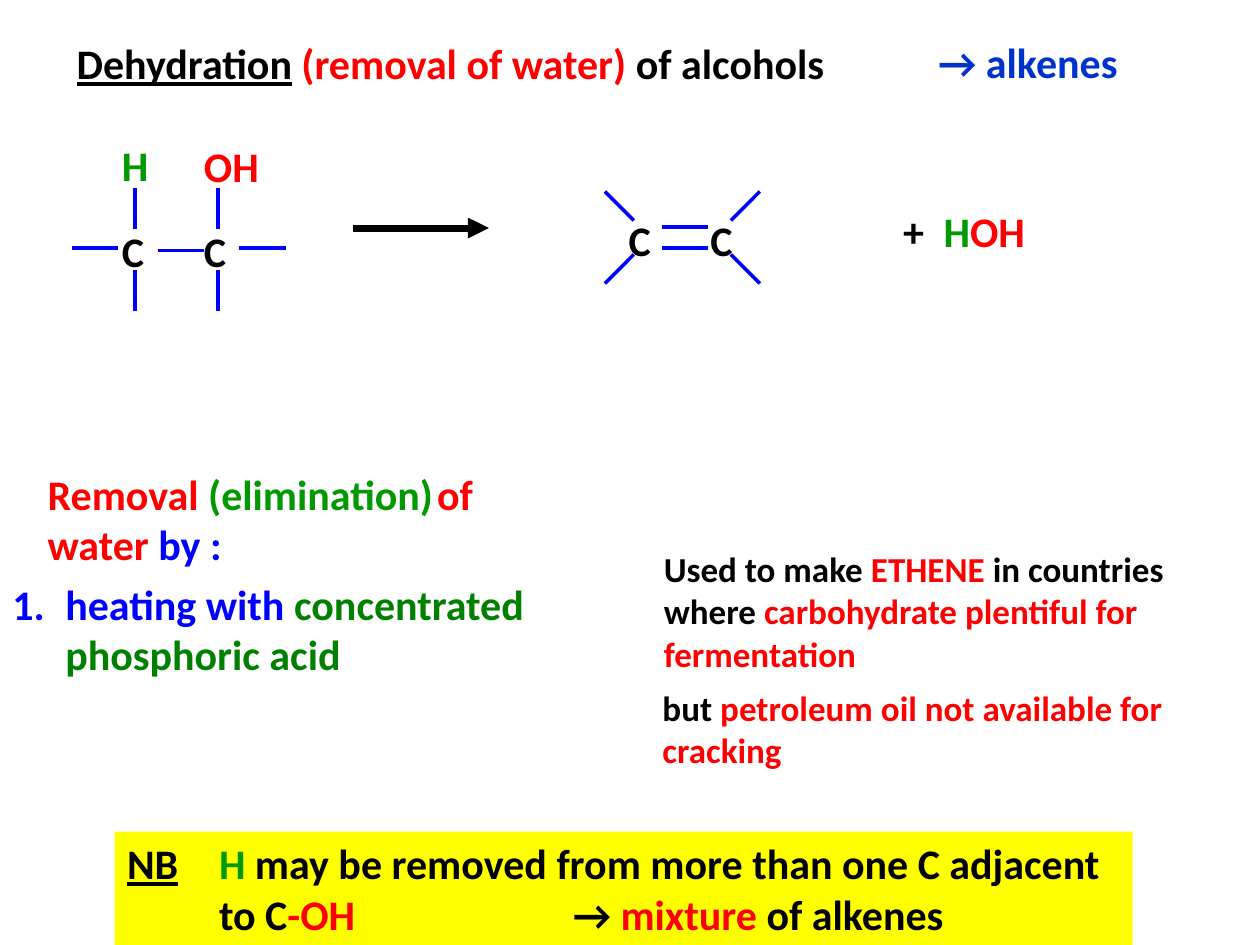
from pptx import Presentation
from pptx.dml.color import RGBColor
from pptx.enum.shapes import MSO_CONNECTOR as Conn, MSO_SHAPE as Kind
from pptx.enum.text import MSO_ANCHOR as Anchor, MSO_AUTO_SIZE as Fit, PP_ALIGN as Align
from pptx.oxml.ns import qn
from pptx.util import Inches, Pt
from lxml.etree import SubElement

BLACK = RGBColor(0, 0, 0)
RED = RGBColor(255, 0, 0)
BLUE = RGBColor(0, 0, 255)
NAVY = RGBColor(0, 0x33, 0xCC)
GREEN = RGBColor(0, 0x99, 0)
DARK = RGBColor(0, 0x80, 0)
YELLOW = RGBColor(255, 255, 0)
FACE = "Calibri"
BOND = 0.37
STEM = 0.33
SLANT = 0.23


def fill_text(shape, runs, size=24, wrap=True, hang=0):
    frame = shape.text_frame
    frame.word_wrap = wrap
    frame.auto_size = Fit.SHAPE_TO_FIT_TEXT
    frame.vertical_anchor = Anchor.TOP
    para = frame.paragraphs[0]
    para.alignment = Align.LEFT
    para.font.name = FACE
    para.font.size = Pt(size)
    para.font.bold = True
    if hang:
        props = para._p.get_or_add_pPr()
        props.set("marL", str(Inches(hang)))
        props.set("indent", str(-Inches(hang)))
    for text, color in runs:
        run = para.add_run()
        run.text = text
        run.font.color.rgb = color
    return para


def add_text(shapes, box, runs, **style):
    label = shapes.add_textbox(*map(Inches, box))
    return fill_text(label, runs, **style)


def add_line(shapes, start, end, color=BLUE, width=2, arrow=False):
    line = shapes.add_connector(Conn.STRAIGHT, *map(Inches, start + end))
    line.line.color.rgb = color
    line.line.width = Pt(width)
    if arrow:
        SubElement(line.line._get_or_add_ln(), qn("a:tailEnd"), type="triangle")
    SubElement(line._element.spPr, qn("a:effectLst"))


def add_atom(shapes, left, top, name, color=BLACK):
    add_text(shapes, (left, top, 0.64, 0.5), [(name, color)], wrap=False)


def draw_alcohol(slide):
    shapes = slide.shapes.add_group_shape().shapes
    for left, y in ((0.57, 1.97), (1.25, 1.99), (1.9, 1.97)):
        add_line(shapes, (left, y), (left + BOND, y))
    for x in (1.07, 1.73):
        for top in (1.49, 2.14):
            add_line(shapes, (x, top + STEM), (x, top))
    for left in (0.87, 1.52):
        add_atom(shapes, left, 1.74, "C")
    add_atom(shapes, 0.87, 1.06, "H", GREEN)
    add_atom(shapes, 1.52, 1.07, "OH", RED)


def draw_alkene(slide):
    shapes = slide.shapes.add_group_shape().shapes
    for y in (1.8, 1.97):
        add_line(shapes, (5.25, y), (5.25 + BOND, y))
    for near, far in ((5.03, 5.03 - SLANT), (5.8, 5.8 + SLANT)):
        add_line(shapes, (near, 1.75), (far, 1.75 - SLANT))
        add_line(shapes, (near, 2.02), (far, 2.02 + SLANT))
    for left in (4.89, 5.54):
        add_atom(shapes, left, 1.65, "C")


def draw_title(slide):
    para = add_text(slide.shapes, (0.51, 0.25, 7.16, 0.5), [
        ("Dehydration", BLACK), (" (removal of water) ", RED), ("of alcohols", BLACK)])
    para.runs[0].font.underline = True
    add_text(slide.shapes, (7.35, 0.24, 1.94, 0.5), [("→ alkenes", NAVY)], wrap=False)


def draw_notes(slide):
    shapes = slide.shapes
    para = add_text(shapes, (0.28, 3.67, 3.83, 0.9), [
        ("Removal ", RED), ("(elimination)", GREEN), (" ", BLACK),
        ("of water", RED), (" by :", BLUE)])
    para.runs[2].font.size = Pt(10)
    add_text(shapes, (0, 4.54, 4.83, 0.91), [
        ("1.\theating with ", BLUE), ("concentrated phosphoric acid", DARK)], hang=0.42)
    add_text(shapes, (5.17, 4.3, 4.83, 1.1), [
        ("Used to make ", BLACK), ("ETHENE", RED), (" in countries where ", BLACK),
        ("carbohydrate plentiful for fermentation", RED)], size=20)
    add_text(shapes, (5.16, 5.4, 4.17, 0.77), [
        ("but ", BLACK), ("petroleum oil not available for cracking", RED)], size=20)


def draw_banner(slide):
    box = slide.shapes.add_shape(Kind.RECTANGLE, *map(Inches, (0.91, 6.6, 8.08, 0.9)))
    box.shadow.inherit = False
    box.fill.solid()
    box.fill.fore_color.rgb = YELLOW
    box.line.fill.background()
    para = fill_text(box, [
        ("NB", BLACK), ("\t", BLACK), ("H", GREEN),
        (" may be removed from more than one C adjacent to C", BLACK),
        ("-OH", RED)], hang=0.73)
    para.runs[0].font.underline = True
    add_text(slide.shapes, (4.45, 7, 4.17, 0.5), [
        ("→", BLACK), (" mixture", RED), (" of alkenes", BLACK)])


def main():
    deck = Presentation()
    deck.slide_width = Inches(10)
    deck.slide_height = Inches(7.5)
    slide = deck.slides.add_slide(deck.slide_layouts[6])
    draw_title(slide)
    add_line(slide.shapes, (2.8, 1.81), (3.88, 1.81), BLACK, 4, arrow=True)
    draw_alcohol(slide)
    add_text(slide.shapes, (7.07, 1.58, 1.86, 0.5), [
        ("+\t", BLACK), ("H", GREEN), ("OH", RED)], hang=0.32)
    draw_alkene(slide)
    draw_notes(slide)
    draw_banner(slide)
    deck.save("out.pptx")


if __name__ == "__main__":
    main()
